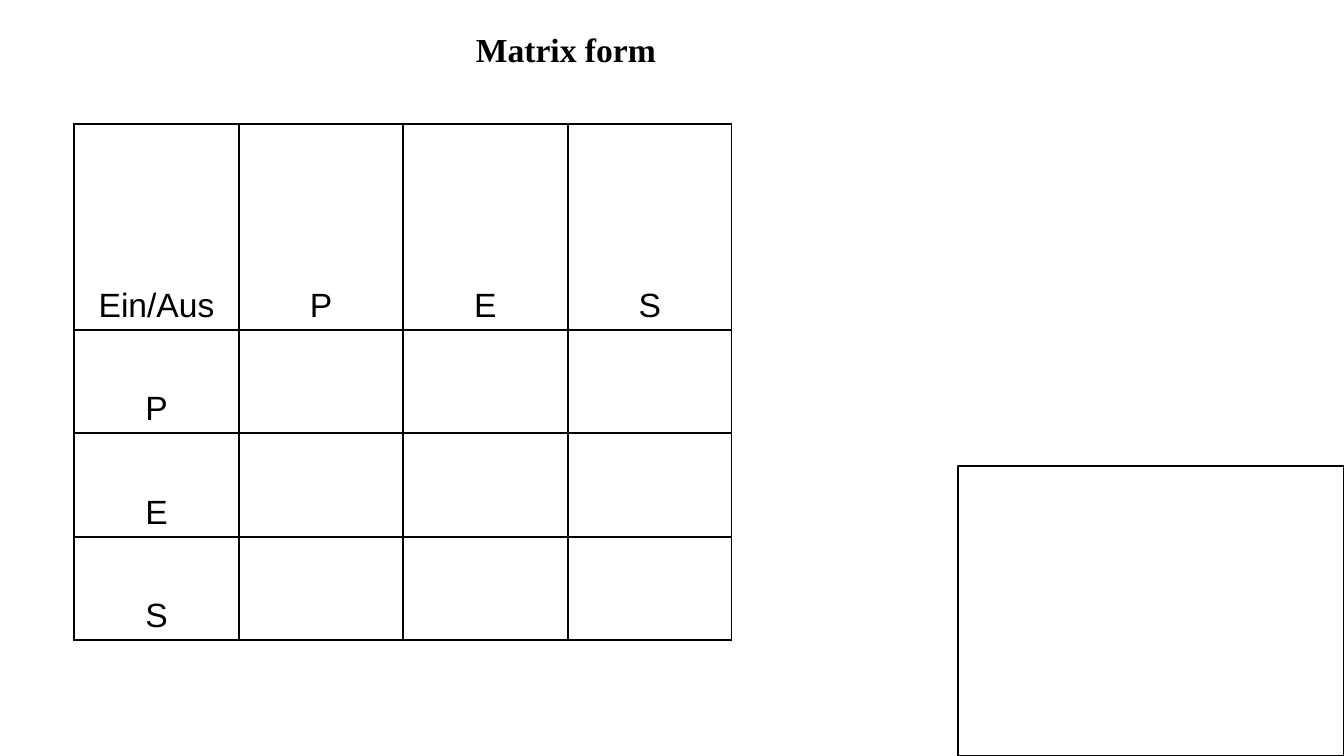
import pptx
import pptx.dml.color
import pptx.enum.shapes
import pptx.enum.text
import pptx.oxml
import pptx.oxml.ns
import pptx.util

EMU_PER_PX = 914400 / 100.8
BLACK = "000000"
TITLE_FONT = {"name": "Times New Roman", "size": pptx.util.Pt(24), "bold": True}
CELL_FONT = {"name": "Arial", "size": pptx.util.Pt(24), "bold": False}
STATES = ["P", "E", "S"]
COLUMN_WIDTHS = [165, 164, 165, 164]
ROW_HEIGHTS = [206, 103, 104, 103]


def px(length):
    return pptx.util.Emu(round(length * EMU_PER_PX))


def color(hex_string):
    return pptx.dml.color.RGBColor.from_string(hex_string)


def write(paragraph, text, font_format):
    run = paragraph.add_run()
    run.text = text
    for attribute, value in font_format.items():
        setattr(run.font, attribute, value)
    run.font.color.rgb = color(BLACK)


def add_title(slide, text, left, top, width, height):
    title = slide.shapes.add_textbox(px(left), px(top), px(width), px(height))
    title.text_frame.word_wrap = True
    title.text_frame.vertical_anchor = pptx.enum.text.MSO_ANCHOR.MIDDLE
    write(title.text_frame.paragraphs[0], text, TITLE_FONT)


def draw_borders(cell):
    """Put a 1 pt line on all four sides; borders must precede the fill."""
    properties = cell._tc.get_or_add_tcPr()
    for position, side in enumerate(["lnL", "lnR", "lnT", "lnB"]):
        border = pptx.oxml.parse_xml(
            f'<a:{side} {pptx.oxml.ns.nsdecls("a")} w="12700"><a:solidFill>'
            f'<a:srgbClr val="{BLACK}"/></a:solidFill></a:{side}>'
        )
        properties.insert(position, border)


def add_matrix(slide, labels, left, top):
    """Label the first row and the first column, leaving the rest empty."""
    matrix = slide.shapes.add_table(
        len(ROW_HEIGHTS), len(COLUMN_WIDTHS), px(left), px(top),
        px(sum(COLUMN_WIDTHS)), px(sum(ROW_HEIGHTS)),
    ).table
    matrix.first_row = False
    matrix.horz_banding = False
    for column, width in zip(matrix.columns, COLUMN_WIDTHS):
        column.width = px(width)
    for row, height in zip(matrix.rows, ROW_HEIGHTS):
        row.height = px(height)
    for cell in matrix.iter_cells():
        cell.fill.background()
        draw_borders(cell)
    for index, label in enumerate(labels):
        header_cells = [matrix.cell(0, index)]
        if index:
            header_cells.append(matrix.cell(index, 0))
        for cell in header_cells:
            cell.vertical_anchor = pptx.enum.text.MSO_ANCHOR.BOTTOM
            paragraph = cell.text_frame.paragraphs[0]
            paragraph.alignment = pptx.enum.text.PP_ALIGN.CENTER
            paragraph.line_spacing = pptx.util.Pt(25.6)
            write(paragraph, label, CELL_FONT)


def add_frame(slide, left, top, width, height):
    frame = slide.shapes.add_shape(
        pptx.enum.shapes.MSO_SHAPE.RECTANGLE,
        px(left), px(top), px(width), px(height),
    )
    frame.shadow.inherit = False
    frame.fill.background()
    frame.line.color.rgb = color(BLACK)
    frame.line.width = pptx.util.Pt(1)


def main():
    presentation = pptx.Presentation()
    presentation.slide_width = px(1344)
    presentation.slide_height = px(756)
    slide = presentation.slides.add_slide(presentation.slide_layouts[6])
    add_title(slide, "Matrix form", 466, 24, 711, 51)
    add_matrix(slide, ["Ein/Aus", *STATES], 74, 124)
    add_frame(slide, 958, 466, 386, 290)
    presentation.save("out.pptx")


if __name__ == "__main__":
    main()
